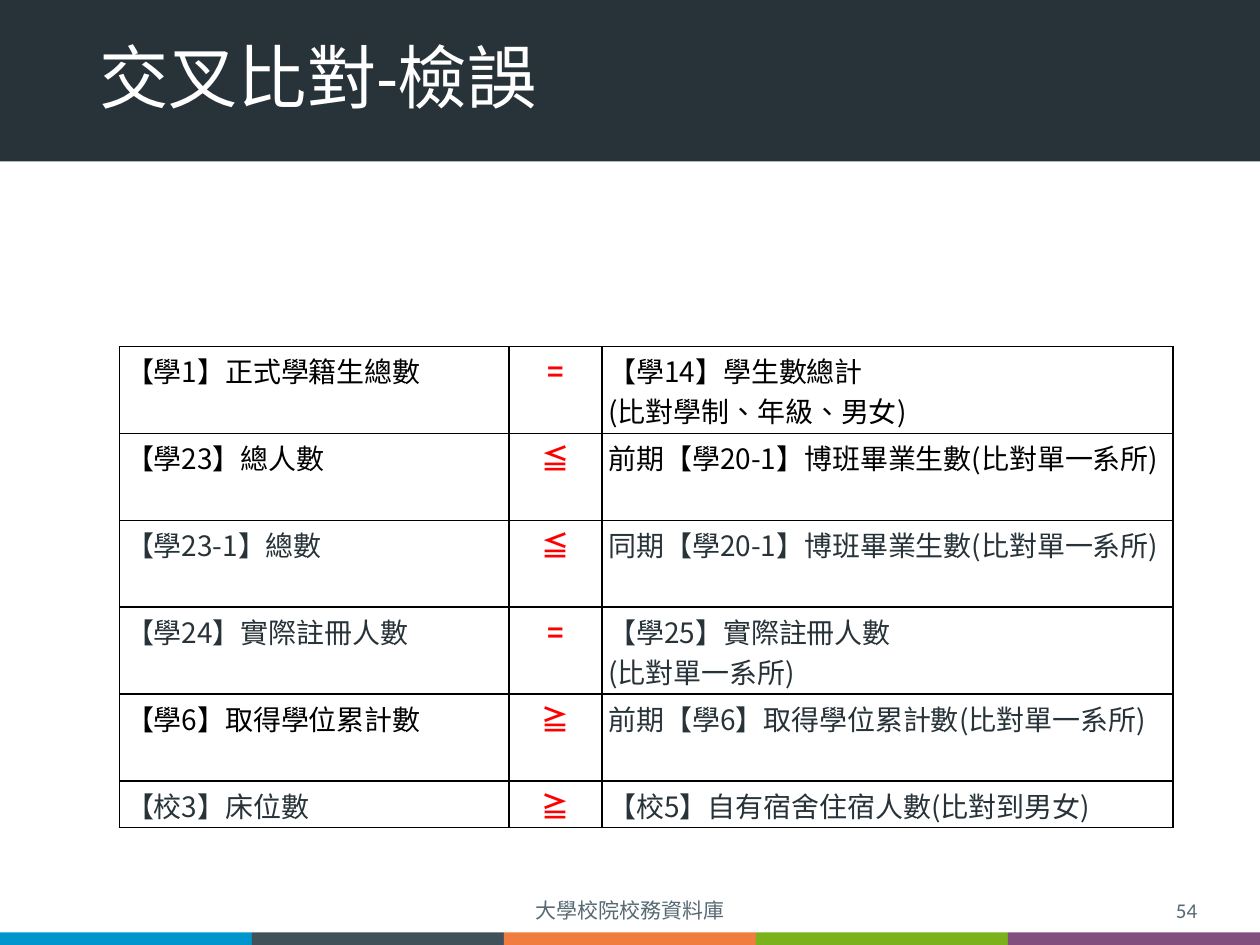
from copy import deepcopy

from lxml import etree
from pptx import Presentation
from pptx.dml.color import RGBColor
from pptx.enum.shapes import MSO_SHAPE
from pptx.enum.text import MSO_ANCHOR, PP_ALIGN
from pptx.oxml.ns import qn
from pptx.util import Inches, Pt

RECT = MSO_SHAPE.RECTANGLE
MIDDLE = MSO_ANCHOR.MIDDLE
LEFT, CENTER, RIGHT = PP_ALIGN.LEFT, PP_ALIGN.CENTER, PP_ALIGN.RIGHT

WIDE, HIGH = 10, 7.5
LATIN, ASIAN = "Calibri", "Noto Sans CJK SC"
COLORS = {
    "dark": "273339", "white": "FFFFFF", "gray": "576973",
    "black": "000000", "red": "FF0000",
}
STRIPES = ["0095CD", "40515A", "F17C3F", "7BB21B", "814E7E"]

# Left text, its colour, sign, right text, its colour
CHECKS = [
    ("【學1】正式學籍生總數", "black", "=",
     "【學14】學生數總計\n(比對學制、年級、男女)", "black"),
    ("【學23】總人數", "black", "≦",
     "前期【學20-1】博班畢業生數(比對單一系所)", "black"),
    ("【學23-1】總數", "dark", "≦",
     "同期【學20-1】博班畢業生數(比對單一系所)", "dark"),
    ("【學24】實際註冊人數", "dark", "=",
     "【學25】實際註冊人數\n(比對單一系所)", "dark"),
    ("【學6】取得學位累計數", "black", "≧",
     "前期【學6】取得學位累計數(比對單一系所)", "dark"),
    ("【校3】床位數", "dark", "≧",
     "【校5】自有宿舍住宿人數(比對到男女)", "dark"),
]
COLS = [3.09, 0.74, 4.53]
ONE, TWO = 0.37, 0.69  # row heights for one and two lines
ROWS = [TWO] * 5 + [ONE]
INSETS = {
    "margin_left": Inches(0.05), "margin_right": Inches(0.05),
    "margin_top": Inches(0.03), "margin_bottom": Inches(0.03),
}


def paint(name):
    return RGBColor.from_string(COLORS.get(name, name))


def apply(item, values):
    for key, value in values.items():
        setattr(item, key, value)


def add_band(slide, box, color):
    band = slide.shapes.add_shape(RECT, *map(Inches, box))
    band.shadow.inherit = False
    band.fill.solid()
    band.fill.fore_color.rgb = paint(color)
    band.line.fill.background()


def write(frame, text, color, size, font=LATIN, align=LEFT, bold=False):
    para = frame.paragraphs[0]
    para.text = text
    para.alignment = align
    for run in para.runs:
        run.font.color.rgb = paint(color)
        apply(run.font, {"size": Pt(size), "name": font, "bold": bold})
        props = run.font._element
        props.set("lang", "zh-TW")
        etree.SubElement(props, qn("a:ea")).set("typeface", ASIAN)
    # Line breaks take the size of the text around them
    for gap in para._p.findall(qn("a:br")):
        gap.append(deepcopy(props))
    return para


def add_label(slide, box, text, color, size, align=LEFT):
    frame = slide.shapes.add_textbox(*map(Inches, box)).text_frame
    apply(frame, {"word_wrap": True, "vertical_anchor": MIDDLE})
    return write(frame, text, color, size, align=align)


def add_edges(cell):
    props = cell._tc.get_or_add_tcPr()
    for index, side in enumerate(("lnL", "lnR", "lnT", "lnB")):
        line = etree.Element(qn("a:" + side), w=str(Pt(1)))
        fill = etree.SubElement(line, qn("a:solidFill"))
        etree.SubElement(fill, qn("a:srgbClr"), val=COLORS["black"])
        props.insert(index, line)


def fill_cell(cell, text, color, **style):
    apply(cell, INSETS)
    cell.fill.background()
    write(cell.text_frame, text, color, 16, ASIAN, **style)
    add_edges(cell)


def add_grid(slide, left, top):
    box = (left, top, sum(COLS), sum(ROWS))
    table = slide.shapes.add_table(
        len(ROWS), len(COLS), *map(Inches, box)).table
    apply(table, {"first_row": False, "horz_banding": False})
    for col, width in zip(table.columns, COLS):
        col.width = Inches(width)
    for row, high, check in zip(table.rows, ROWS, CHECKS):
        row.height = Inches(high)
        name, shade, sign, match, tint = check
        fill_cell(row.cells[0], name, shade)
        fill_cell(row.cells[1], sign, "red", align=CENTER, bold=True)
        fill_cell(row.cells[2], match, tint)


def main():
    deck = Presentation()
    apply(deck, {"slide_width": Inches(WIDE), "slide_height": Inches(HIGH)})
    slide = deck.slides.add_slide(deck.slide_layouts[6])

    # Title band and bottom stripes
    add_band(slide, (0, -0.01, WIDE, 1.29), "dark")
    step = WIDE / len(STRIPES)
    for index, color in enumerate(STRIPES):
        add_band(slide, (index * step, HIGH - 0.1, step, 0.1), color)

    # Title and footer
    title = add_label(slide, (0.69, 0.27, 8.62, 0.74),
                      "交叉比對-檢誤", "white", 39.6)
    title.line_spacing = 0.9
    add_label(slide, (3.31, 7.07, 3.38, 0.31),
              "大學校院校務資料庫", "gray", 12, CENTER)
    add_label(slide, (7.35, 7.07, 2.25, 0.31), "54", "gray", 12, RIGHT)

    # Table of checks
    add_grid(slide, 0.95, 2.75)
    deck.save("out.pptx")


if __name__ == "__main__":
    main()
